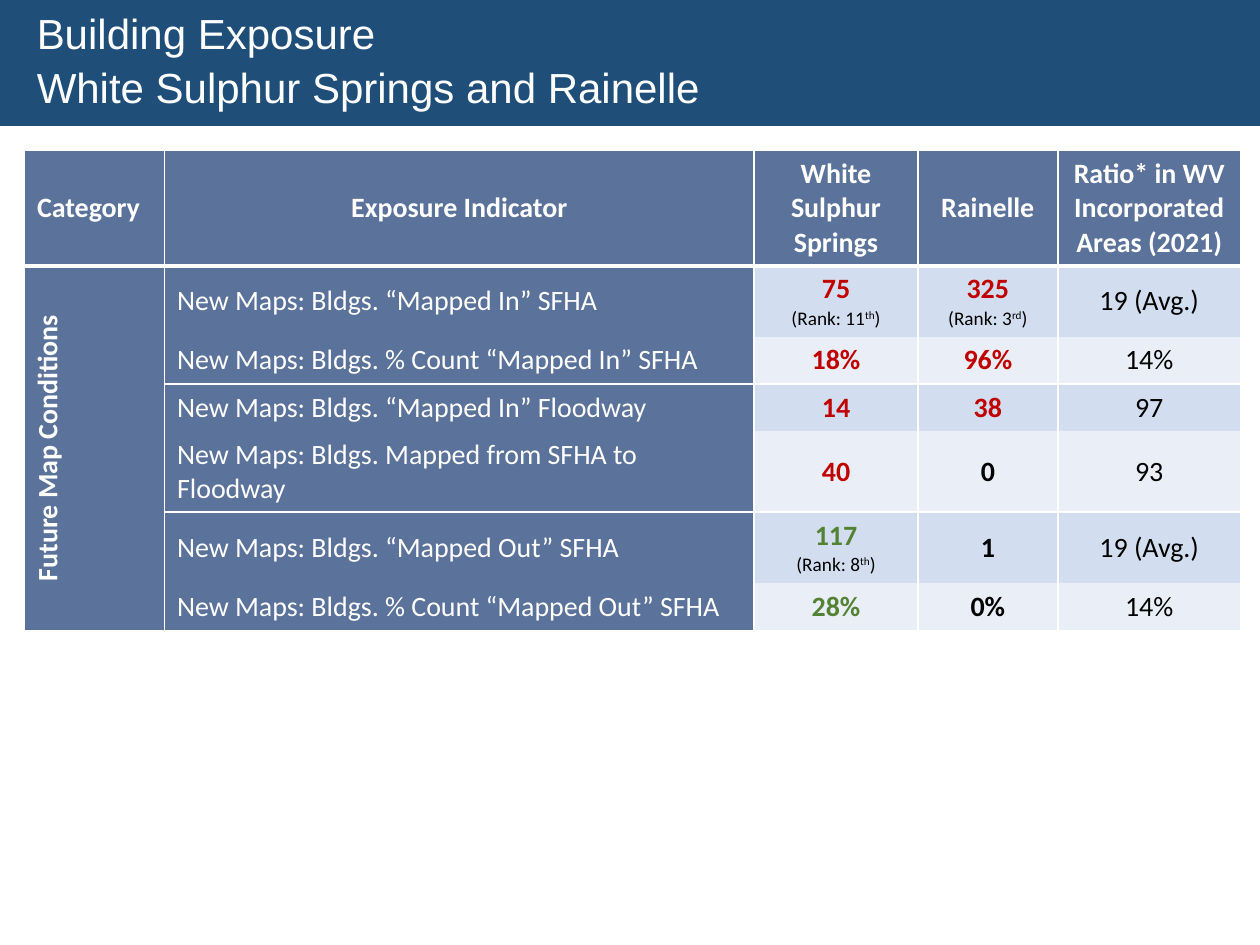
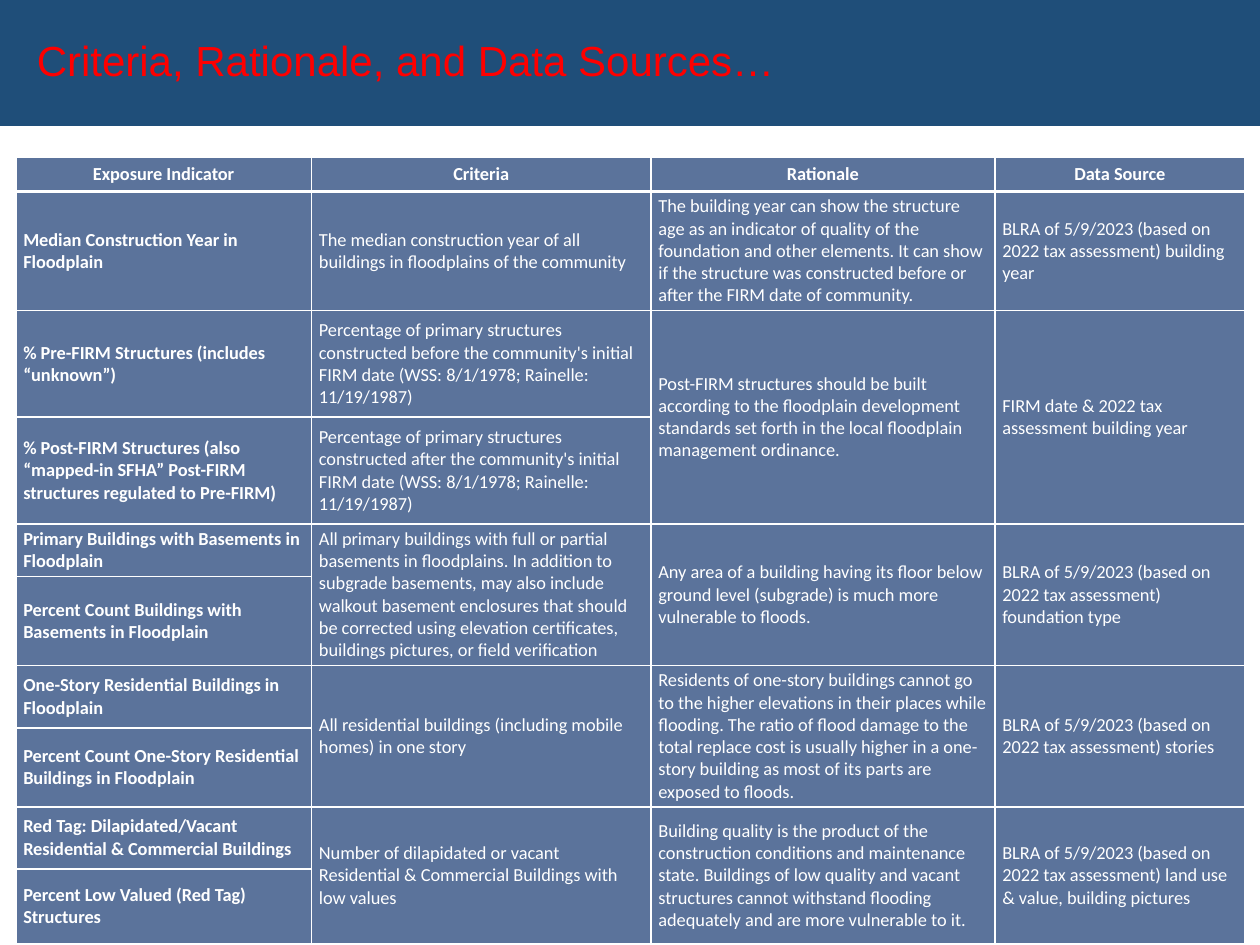
import itertools

import lxml.etree
import pptx
import pptx.dml.color
import pptx.enum.text
import pptx.oxml.ns
import pptx.util

Pt = pptx.util.Pt
ALIGN = pptx.enum.text.PP_ALIGN
MIDDLE = pptx.enum.text.MSO_ANCHOR.MIDDLE
NAVY, SLATE, PALE, LIGHT = "1F4E79", "5B739B", "D2DEEF", "EAEFF7"
WHITE, BLACK, RED, GREEN, ALERT = "FFFFFF", "000000", "C00000", "548235", "FF0000"

HEADS = ["Category", "Exposure Indicator", "White Sulphur Springs", "Rainelle",
         "Ratio* in WV Incorporated Areas (2021)"]
GROUP = "Future Map Conditions"
COUNTS = [
    ("New Maps: Bldgs. “Mapped In” SFHA",
     ("75", RED, "11", "th"), ("325", RED, "3", "rd"), "19 (Avg.)"),
    ("New Maps: Bldgs. % Count “Mapped In” SFHA", ("18%", RED), ("96%", RED), "14%"),
    ("New Maps: Bldgs. “Mapped In” Floodway", ("14", RED), ("38", RED), "97"),
    ("New Maps: Bldgs. Mapped from SFHA to Floodway", ("40", RED), ("0", BLACK), "93"),
    ("New Maps: Bldgs. “Mapped Out” SFHA",
     ("117", GREEN, "8", "th"), ("1", BLACK), "19 (Avg.)"),
    ("New Maps: Bldgs. % Count “Mapped Out” SFHA", ("28%", GREEN), ("0%", BLACK), "14%"),
]
BLRA = "BLRA of 5/9/2023 (based on 2022 tax assessment) "
FIRM = ("Percentage of primary structures constructed {} the community's initial "
        "FIRM date (WSS: 8/1/1978; Rainelle: 11/19/1987)")
SOURCES = [
    ("Exposure Indicator", "Criteria", "Rationale", "Data Source"),
    ("Median Construction Year in Floodplain",
     "The median construction year of all buildings in floodplains of the community",
     "The building year can show the structure age as an indicator of quality of the "
     "foundation and other elements. It can show if the structure was constructed "
     "before or after the FIRM date of community.",
     BLRA + "building year"),
    ("% Pre-FIRM Structures (includes “unknown”)",
     FIRM.format("before"),
     "Post-FIRM structures should be built according to the floodplain development "
     "standards set forth in the local floodplain management ordinance.",
     "FIRM date & 2022 tax assessment building year"),
    ("% Post-FIRM Structures (also “mapped-in SFHA” Post-FIRM structures regulated "
     "to Pre-FIRM)",
     FIRM.format("after"), None, None),
    ("Primary Buildings with Basements in Floodplain",
     "All primary buildings with full or partial basements in floodplains. In addition "
     "to subgrade basements, may also include walkout basement enclosures that should "
     "be corrected using elevation certificates, buildings pictures, or field "
     "verification",
     "Any area of a building having its floor below ground level (subgrade) is much "
     "more vulnerable to floods.",
     BLRA + "foundation type"),
    ("Percent Count Buildings with Basements in Floodplain", None, None, None),
    ("One-Story Residential Buildings in Floodplain",
     "All residential buildings (including mobile homes) in one story",
     "Residents of one-story buildings cannot go to the higher elevations in their "
     "places while flooding. The ratio of flood damage to the total replace cost is "
     "usually higher in a one-story building as most of its parts are exposed to floods.",
     BLRA + "stories"),
    ("Percent Count One-Story Residential Buildings in Floodplain", None, None, None),
    ("Red Tag: Dilapidated/Vacant Residential & Commercial Buildings",
     "Number of dilapidated or vacant Residential & Commercial Buildings with low values",
     "Building quality is the product of the construction conditions and maintenance "
     "state. Buildings of low quality and vacant structures cannot withstand flooding "
     "adequately and are more vulnerable to it.",
     BLRA + "land use & value, building pictures"),
    ("Percent Low Valued (Red Tag) Structures", None, None, None),
]


def rgb(code):
    return pptx.dml.color.RGBColor.from_string(code)


def style(para, size, color, bold=False, align=ALIGN.LEFT, face="Calibri"):
    para.alignment = align
    font = para.font
    font.name, font.size, font.bold = face, Pt(size), bold
    font.color.rgb = rgb(color)


def start(deck, lines, color):
    slide = deck.slides.add_slide(deck.slide_layouts[5])
    band = slide.shapes.title
    band.left, band.top, band.width, band.height = 0, 0, deck.slide_width, Pt(72)
    band.fill.solid()
    band.fill.fore_color.rgb = rgb(NAVY)
    frame = band.text_frame
    frame.auto_size = pptx.enum.text.MSO_AUTO_SIZE.NONE
    frame.vertical_anchor = MIDDLE
    frame.margin_left = Pt(21)
    frame.text = "\n".join(lines)
    for num, para in enumerate(frame.paragraphs):
        style(para, 24, color, face="Arial")
        para.line_spacing = 0.9
        para.space_before = Pt(5 if num else 0)
    return slide


def edge(cell, side, width):
    props = cell._tc.get_or_add_tcPr()
    line = lxml.etree.SubElement(props, pptx.oxml.ns.qn("a:ln" + side), w=str(Pt(width)))
    kind = "a:solidFill" if width else "a:noFill"
    fill = lxml.etree.SubElement(line, pptx.oxml.ns.qn(kind))
    if width:
        lxml.etree.SubElement(fill, pptx.oxml.ns.qn("a:srgbClr"), val=WHITE)


def grid(slide, left, top, wides, highs, rules):
    frame = slide.shapes.add_table(len(highs), len(wides), Pt(left), Pt(top),
                                   Pt(sum(wides)), Pt(sum(highs)))
    table = frame.table
    table.horz_banding = False
    for col, wide in zip(table.columns, wides):
        col.width = Pt(wide)
    for row, high in zip(table.rows, highs):
        row.height = Pt(high)
    for row, (above, below) in zip(table.rows, itertools.pairwise([1] + rules)):
        for cell in row.cells:
            for side, width in zip("LRTB", (1, 1, above, below)):
                edge(cell, side, width)
            cell.vertical_anchor = MIDDLE
    return table


def shade(cell, color):
    cell.fill.solid()
    cell.fill.fore_color.rgb = rgb(color)


def write(cell, text, *look, **more):
    cell.text = text
    style(cell.text_frame.paragraphs[0], *look, **more)


def rank(cell, place, suffix):
    para = cell.text_frame.add_paragraph()
    style(para, 11, BLACK, align=ALIGN.CENTER)
    for text in (f"(Rank: {place}", suffix, ")"):
        run = para.add_run()
        run.text = text
        if text == suffix:
            run._r.get_or_add_rPr().set("baseline", "30000")


def exposure(deck):
    slide = start(deck, ["Building Exposure", "White Sulphur Springs and Rainelle"], WHITE)
    table = grid(slide, 14, 86, [80, 337, 93.5, 80, 104.5],
                 [65.5, 40.5, 27, 27, 46, 40.5, 27], [3, 0, 1, 0, 1, 0, 1])
    for col, head in enumerate(HEADS):
        cell = table.cell(0, col)
        shade(cell, SLATE)
        write(cell, head, 16, WHITE, True, ALIGN.CENTER if col else ALIGN.LEFT)
    group = table.cell(1, 0)
    group.merge(table.cell(len(COUNTS), 0))
    write(group, GROUP, 16, WHITE, True, ALIGN.CENTER)
    group._tc.get_or_add_tcPr().set("vert", "vert270")
    for num, (label, *towns, ratio) in enumerate(COUNTS, 1):
        cells = list(table.rows[num].cells)
        for col, cell in enumerate(cells):
            shade(cell, SLATE if col < 2 else PALE if num % 2 else LIGHT)
        write(cells[1], label, 16, WHITE)
        for cell, (value, color, *place) in zip(cells[2:], towns):
            write(cell, value, 16, color, True, ALIGN.CENTER)
            if place:
                rank(cell, *place)
        write(cells[4], ratio, 16, BLACK, align=ALIGN.CENTER)


def criteria(deck):
    slide = start(deck, ["Criteria, Rationale, and Data Sources…"], ALERT)
    table = grid(slide, 9, 90, [169, 194, 196.5, 143],
                 [19.5, 68, 61, 61, 30, 51, 35.5, 45, 35.5, 43], [2.25] + [1] * 9)
    for num, row in enumerate(SOURCES):
        for col, text in enumerate(row):
            cell = table.cell(num, col)
            shade(cell, SLATE)
            cell.margin_left = cell.margin_right = Pt(4.3)
            cell.margin_top = cell.margin_bottom = Pt(2.15)
            if text is None:
                table.cell(num - 1, col).merge(cell)
            else:
                write(cell, text, 10.5, WHITE, num == 0 or col == 0,
                      ALIGN.LEFT if num else ALIGN.CENTER)


def main():
    deck = pptx.Presentation()
    deck.slide_width, deck.slide_height = Pt(720), Pt(540)
    exposure(deck)
    criteria(deck)
    deck.save("out.pptx")


if __name__ == "__main__":
    main()
